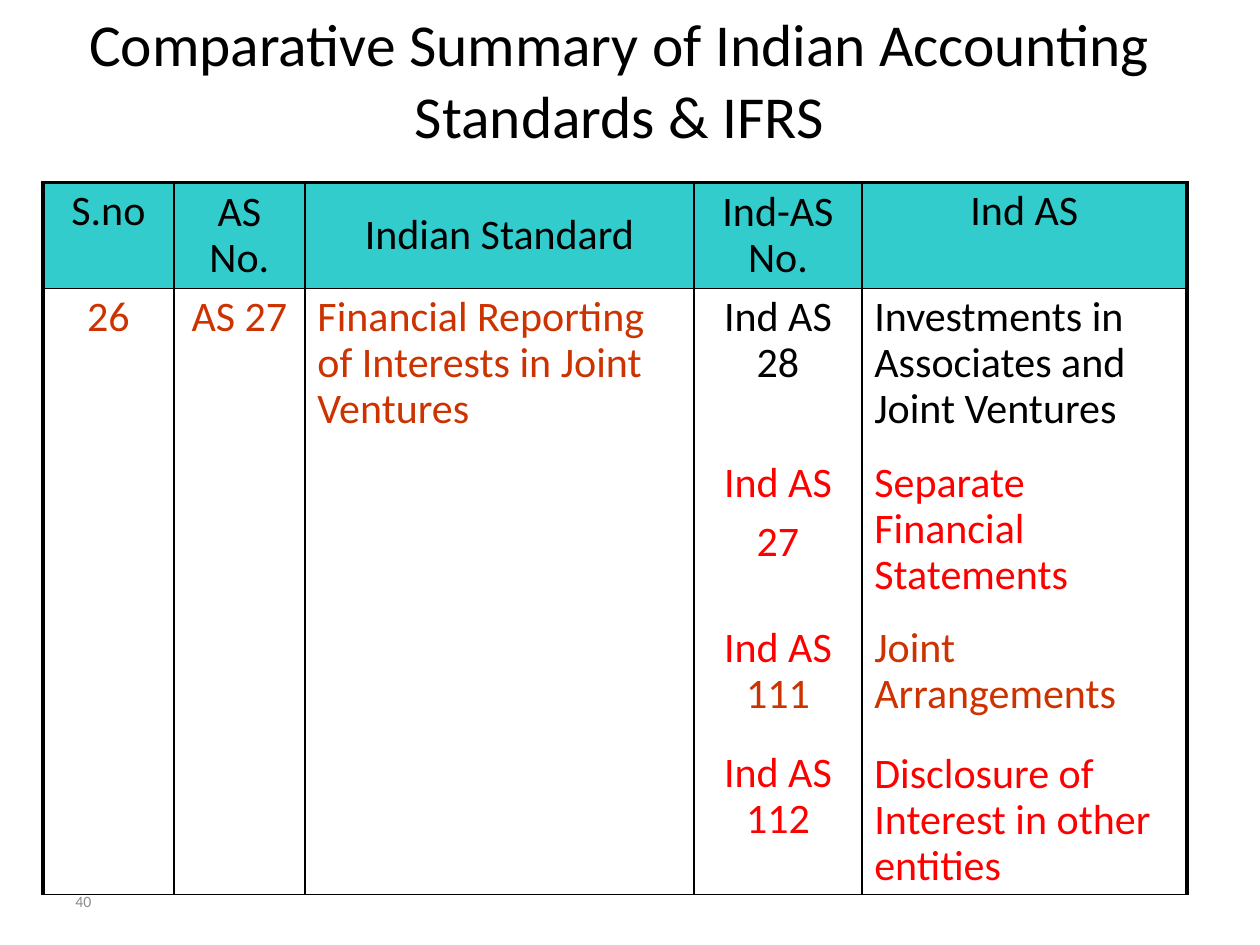
from dataclasses import dataclass

from lxml import etree
from pptx import Presentation
from pptx.dml.color import RGBColor
from pptx.enum import text
from pptx.oxml import ns
from pptx.util import Inches, Pt

WIDE, HIGH = Inches(10), Inches(7.5)


@dataclass(frozen=True)
class Theme:
    font: str = "Calibri"
    ink: str = "000000"
    red: str = "FF0000"
    rust: str = "CC3300"
    gray: str = "8C8C8C"
    teal: str = "33CCCC"
    title: int = 34
    body: int = 24
    small: int = 9
    thin: float = 1
    thick: float = 2.25
    lead: float = 0.9


T = Theme()
MID, TOP = text.MSO_ANCHOR.MIDDLE, text.MSO_ANCHOR.TOP
LEFT, CENTER = text.PP_ALIGN.LEFT, text.PP_ALIGN.CENTER

# Column shares are percent of the slide's width, row shares of its height.
COLS = [10.4, 10.4, 30.9, 13.3, 25.8]
ROWS = [11.2, 64.13]

HEADS = [("S.no", TOP), ("AS No.", MID), ("Indian Standard", MID),
         ("Ind-AS No.", MID), ("Ind AS", TOP)]

# Each paragraph: runs of (words, colour), space before, line spacing.
BODY = [
    (CENTER, [([("26", T.rust)], 0, T.lead)]),
    (CENTER, [([("AS 27", T.rust)], 0, T.lead)]),
    (LEFT, [([("Financial Reporting of Interests in Joint Ventures", T.rust)],
             0, T.lead)]),
    (CENTER, [([("Ind AS 28", T.ink)], 0, T.lead),
              ([("Ind AS", T.red)], 40.5, 1),
              ([("27", T.red)], 4.5, 1),
              ([("Ind AS ", T.red), ("111", T.rust)], 32.5, T.lead),
              ([("Ind AS 112", T.red)], 19, T.lead)]),
    (LEFT, [([("Investments in Associates and Joint Ventures", T.ink)],
             0, T.lead),
            ([("Separate Financial Statements", T.red)], 15.5, T.lead),
            ([("Joint Arrangements", T.rust)], 15.5, T.lead),
            ([("Disclosure of Interest in other entities", T.red)],
             19, T.lead)]),
]


def across(share):
    return round(WIDE * share / 100)


def down(share):
    return round(HIGH * share / 100)


def area(x, y, w, h):
    """Turn percent shares of the slide into lengths."""
    return across(x), down(y), across(w), down(h)


def write(frame, paras, size, align):
    for i, (runs, gap, lead) in enumerate(paras):
        para = frame.add_paragraph() if i else frame.paragraphs[0]
        para.alignment = align
        para.line_spacing = lead
        if gap:
            para.space_before = Pt(gap)
        for words, color in runs:
            run = para.add_run()
            run.text = words
            run.font.name = T.font
            run.font.size = Pt(size)
            run.font.color.rgb = RGBColor.from_string(color)


def label(slide, box, words, size, color, align):
    frame = slide.shapes.add_textbox(*area(*box)).text_frame
    frame.word_wrap = True
    frame.vertical_anchor = MID
    write(frame, [([(words, color)], 0, 1)], size, align)


def border(cell, widths):
    """Draw the sides L, R, T and B in the given point widths."""
    props = cell._tc.get_or_add_tcPr()
    for side, width in zip("LRTB", widths):
        line = etree.SubElement(props, ns.qn("a:ln" + side), w=str(Pt(width)))
        fill = etree.SubElement(line, ns.qn("a:solidFill"))
        etree.SubElement(fill, ns.qn("a:srgbClr"), val=T.ink)


def fill_cell(cell, col, head, paras, align, anchor):
    border(cell, [T.thick if col == 0 else T.thin,
                  T.thick if col == len(COLS) - 1 else T.thin,
                  T.thick if head else T.thin,
                  T.thin])
    if head:
        cell.fill.solid()
        cell.fill.fore_color.rgb = RGBColor.from_string(T.teal)
    else:
        cell.fill.background()
    cell.vertical_anchor = anchor
    write(cell.text_frame, paras, T.body, align)


def grid(slide, x, y):
    box = area(x, y, sum(COLS), sum(ROWS))
    table = slide.shapes.add_table(len(ROWS), len(COLS), *box).table
    table.first_row = table.horz_banding = False
    for col, share in zip(table.columns, COLS):
        col.width = across(share)
    for row, share in zip(table.rows, ROWS):
        row.height = down(share)
    for i, (words, anchor) in enumerate(HEADS):
        paras = [([(words, T.ink)], 0, T.lead)]
        fill_cell(table.cell(0, i), i, True, paras, CENTER, anchor)
    for i, (align, paras) in enumerate(BODY):
        fill_cell(table.cell(1, i), i, False, paras, align, TOP)


def main():
    deck = Presentation()
    deck.slide_width, deck.slide_height = WIDE, HIGH
    slide = deck.slides.add_slide(deck.slide_layouts[6])
    label(slide, (5, 92.67, 23.3, 5.33), "40", T.small, T.gray, LEFT)
    grid(slide, 3.4, 19.33)
    label(slide, (2.5, 0, 93.3, 16.67),
          "Comparative Summary of Indian Accounting Standards & IFRS",
          T.title, T.ink, CENTER)
    deck.save("out.pptx")


if __name__ == "__main__":
    main()
